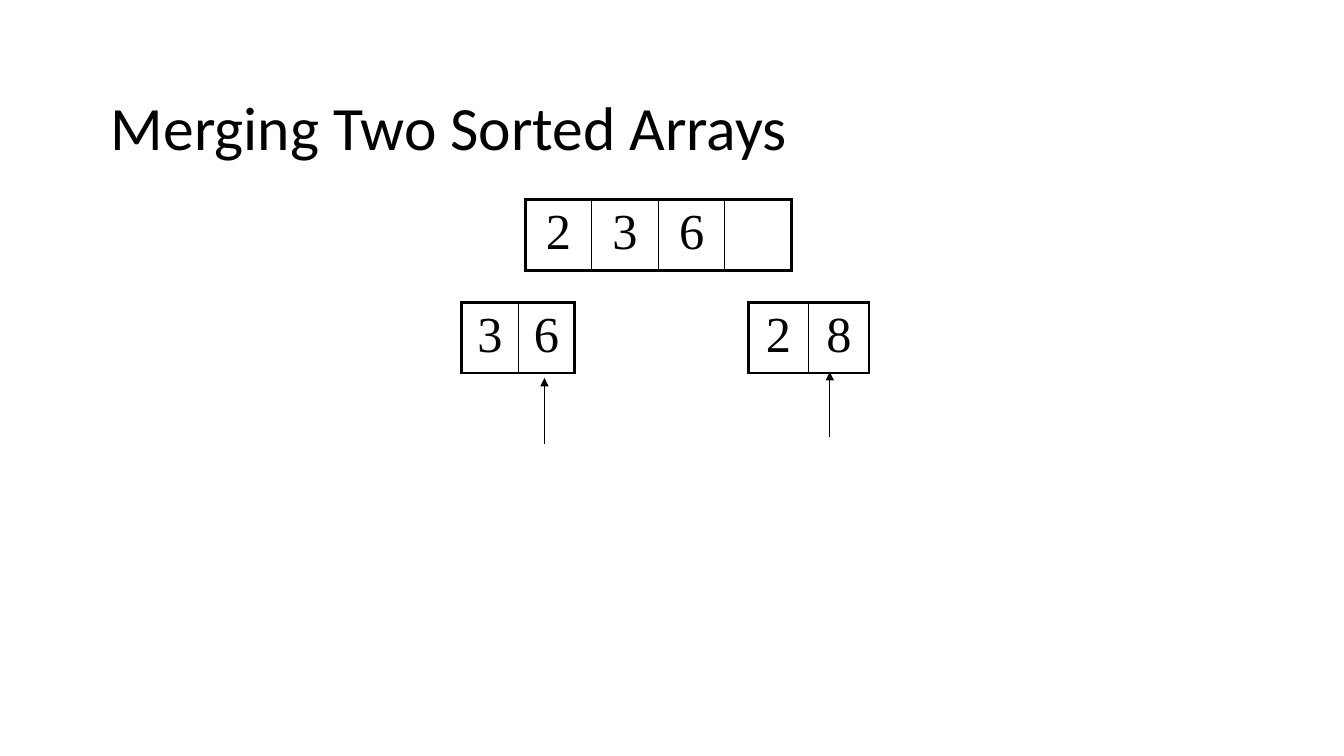
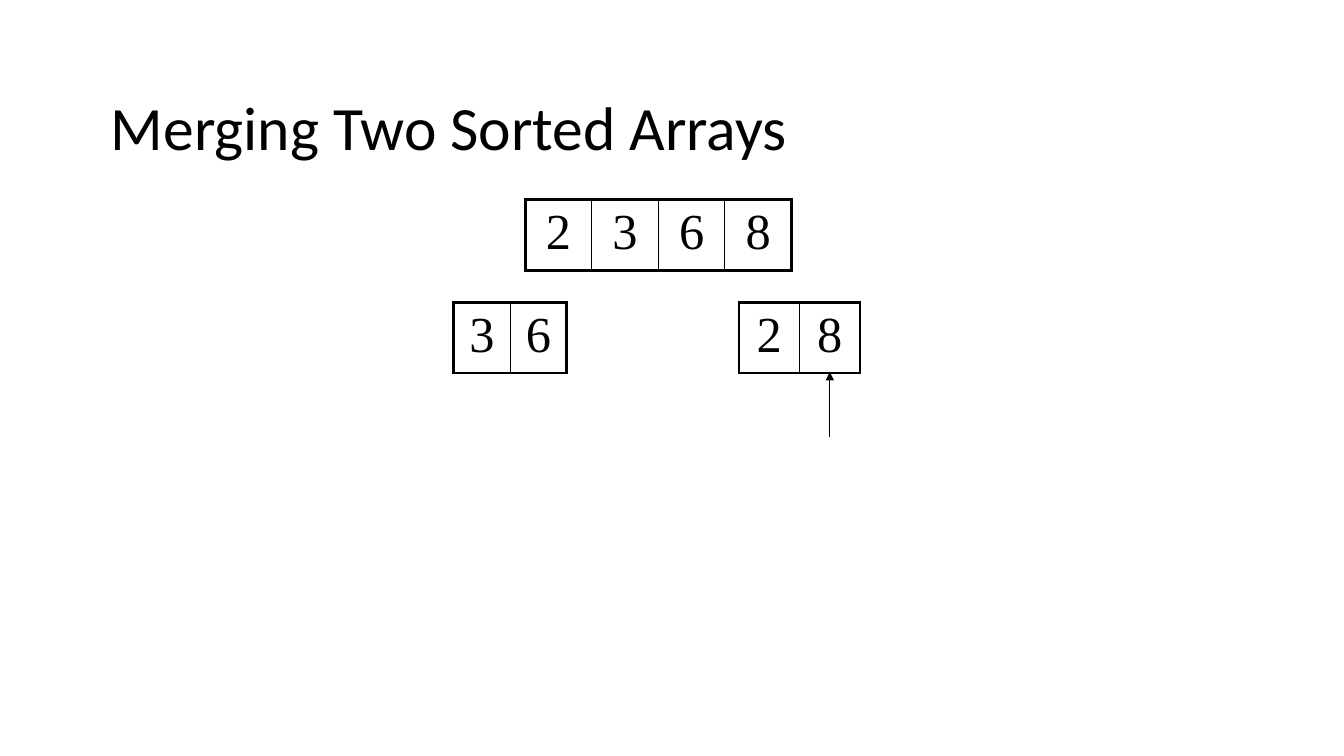
from dataclasses import dataclass

from lxml.etree import SubElement
from pptx import Presentation
from pptx.dml.color import RGBColor
from pptx.enum.shapes import MSO_CONNECTOR
from pptx.enum.text import MSO_ANCHOR, PP_ALIGN
from pptx.oxml import parse_xml
from pptx.oxml.ns import nsdecls, qn
from pptx.slide import Slide
from pptx.table import _Cell as Cell
from pptx.text.text import _Paragraph as Paragraph
from pptx.util import Emu, Pt

EMU_PER_PX = 9144  # 100 px to the inch
COLORS = {"ink": "000000", "paper": "FFFFFF"}
TITLE = "Merging Two Sorted Arrays"
TITLE_FONT, DIGIT_FONT = "Calibri", "Times New Roman"
OUTER_PT, INNER_PT = 2.25, 1
ROW_HEIGHT = 70
ARROW_LENGTH = 65
MERGED_TOP, HALVES_TOP = 198, 300


@dataclass(frozen=True)
class Array:
    left: int
    top: int
    cell_width: int
    values: tuple[str, ...]


@dataclass(frozen=True)
class Pointer:
    """An upward arrow marking the current element."""
    x: int
    tip: int


@dataclass(frozen=True)
class Step:
    arrays: tuple[Array, ...]
    pointers: tuple[Pointer, ...]


def merge_step(last: str, left_x: int, right_x: int, *pointers: Pointer) -> Step:
    arrays = (
        Array(521, MERGED_TOP, 66, ("2", "3", "6", last)),
        Array(left_x, HALVES_TOP, 56, ("3", "6")),
        Array(right_x, HALVES_TOP, 60, ("2", "8")),
    )
    return Step(arrays, pointers)


RIGHT_POINTER = Pointer(823, 369)
STEPS = (
    merge_step("", 458, 742, Pointer(540, 375), RIGHT_POINTER),
    merge_step("8", 450, 733, RIGHT_POINTER),
)


def px(n: int) -> Emu:
    return Emu(n * EMU_PER_PX)


def style_text(p: Paragraph, font: str, size: int) -> None:
    p.font.name = font
    p.font.size = Pt(size)
    p.font.color.rgb = RGBColor.from_string(COLORS["ink"])


def add_title(s: Slide) -> None:
    tf = s.shapes.add_textbox(px(100), px(67), px(1133), px(125)).text_frame
    tf.word_wrap = True
    tf.vertical_anchor = MSO_ANCHOR.MIDDLE
    p = tf.paragraphs[0]
    p.text = TITLE
    p.line_spacing = 0.9
    style_text(p, TITLE_FONT, 44)


def set_borders(cell: Cell, first: bool, last: bool) -> None:
    """Draw a heavy outline round the row and thin lines between cells."""
    widths = {
        "lnL": OUTER_PT if first else INNER_PT,
        "lnR": OUTER_PT if last else INNER_PT,
        "lnT": OUTER_PT,
        "lnB": OUTER_PT,
    }
    tc_pr = cell._tc.get_or_add_tcPr()
    for i, (side, width) in enumerate(widths.items()):
        tc_pr.insert(i, parse_xml(
            f'<a:{side} {nsdecls("a")} w="{Pt(width)}"><a:solidFill>'
            f'<a:srgbClr val="{COLORS["ink"]}"/></a:solidFill></a:{side}>'))


def add_array(s: Slide, array: Array) -> None:
    count = len(array.values)
    table = s.shapes.add_table(
        1, count, px(array.left), px(array.top),
        px(array.cell_width * count), px(ROW_HEIGHT)).table
    table.first_row = table.horz_banding = False
    for i, value in enumerate(array.values):
        table.columns[i].width = px(array.cell_width)
        cell = table.cell(0, i)
        cell.fill.background()
        set_borders(cell, i == 0, i == count - 1)
        p = cell.text_frame.paragraphs[0]
        p.alignment = PP_ALIGN.CENTER
        style_text(p, DIGIT_FONT, 36)
        if value:
            p.text = value


def add_pointer(s: Slide, pointer: Pointer) -> None:
    arrow = s.shapes.add_connector(
        MSO_CONNECTOR.STRAIGHT, px(pointer.x), px(pointer.tip + ARROW_LENGTH),
        px(pointer.x), px(pointer.tip))
    arrow.line.width = Pt(1)
    arrow.line.color.rgb = RGBColor.from_string(COLORS["ink"])
    SubElement(arrow.line._get_or_add_ln(), qn("a:tailEnd"), type="triangle")
    SubElement(arrow._element.spPr, qn("a:effectLst"))


def main() -> None:
    prs = Presentation()
    prs.slide_width, prs.slide_height = px(1333), px(750)
    for step in STEPS:
        s = prs.slides.add_slide(prs.slide_layouts[6])
        s.background.fill.solid()
        s.background.fill.fore_color.rgb = RGBColor.from_string(COLORS["paper"])
        add_title(s)
        for array in step.arrays:
            add_array(s, array)
        for pointer in step.pointers:
            add_pointer(s, pointer)
    prs.save("out.pptx")


if __name__ == "__main__":
    main()
